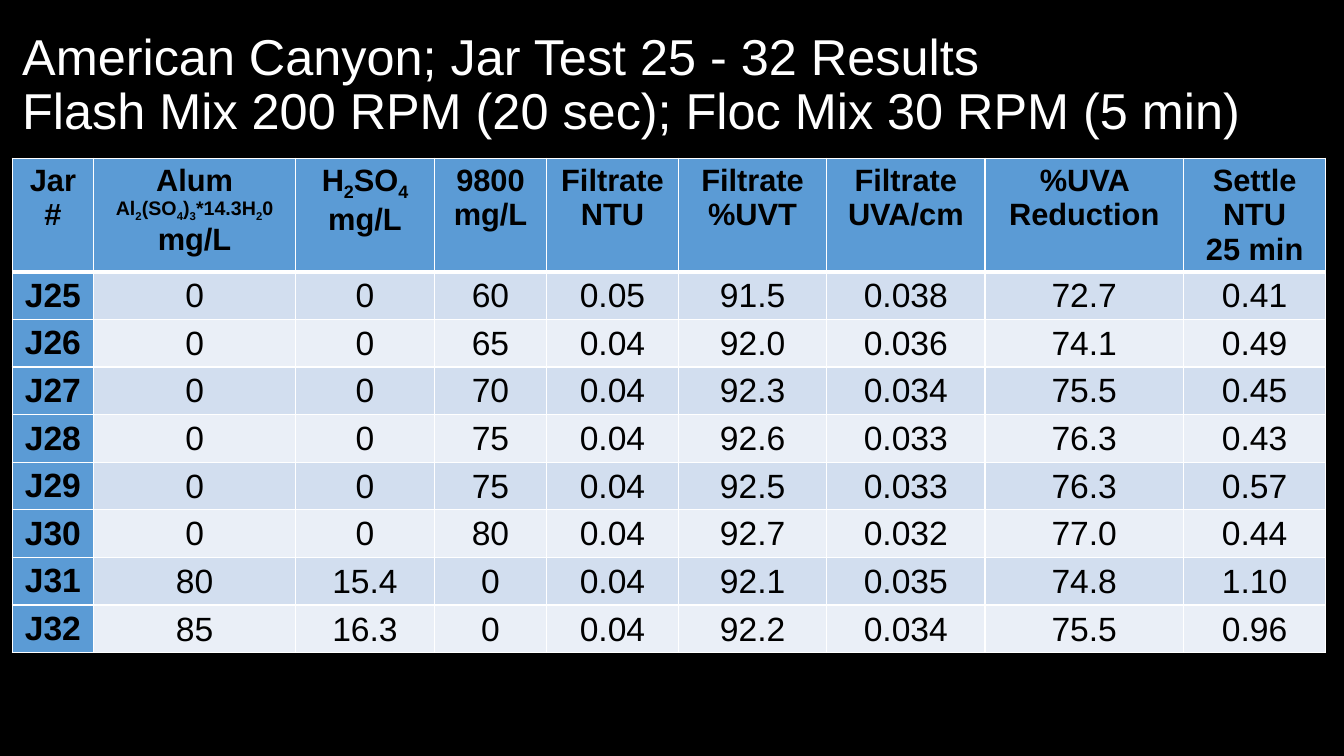
import dataclasses

import pptx
import pptx.dml.color
import pptx.enum.text
import pptx.oxml
import pptx.oxml.ns
import pptx.util

Anchor = pptx.enum.text.MSO_ANCHOR
Align = pptx.enum.text.PP_ALIGN


@dataclasses.dataclass(frozen=True)
class Theme:
    font: str = "Arial"
    page: str = "000000"
    title: str = "FFFFFF"
    text: str = "000000"
    accent: str = "5B9BD5"
    bands: tuple = ("D2DEEF", "EAEFF7")
    rule: str = "FFFFFF"
    title_size: int = 36
    header_size: int = 22
    formula_size: int = 14
    body_size: int = 24
    thin: int = 1
    thick: int = 3


TITLE = "American Canyon; Jar Test 25 - 32 Results\vFlash Mix 200 RPM (20 sec); Floc Mix 30 RPM (5 min)"
HEADERS = [
    ["Jar#"],
    ["Alum", "Al_2(SO_4)_3*14.3H_20", "mg/L"],
    ["H_2SO_4", "mg/L"],
    ["9800", "mg/L"],
    ["Filtrate", "NTU"],
    ["Filtrate", "%UVT"],
    ["Filtrate", "UVA/cm"],
    ["%UVA Reduction"],
    ["Settle", "NTU", "25 min"],
]
FORMULA = HEADERS[1][1]
COLUMNS = [0.81, 2, 1.38, 1.11, 1.31, 1.47, 1.57, 1.97, 1.41]
RESULTS = [
    ["J25", "0", "0", "60", "0.05", "91.5", "0.038", "72.7", "0.41"],
    ["J26", "0", "0", "65", "0.04", "92.0", "0.036", "74.1", "0.49"],
    ["J27", "0", "0", "70", "0.04", "92.3", "0.034", "75.5", "0.45"],
    ["J28", "0", "0", "75", "0.04", "92.6", "0.033", "76.3", "0.43"],
    ["J29", "0", "0", "75", "0.04", "92.5", "0.033", "76.3", "0.57"],
    ["J30", "0", "0", "80", "0.04", "92.7", "0.032", "77.0", "0.44"],
    ["J31", "80", "15.4", "0", "0.04", "92.1", "0.035", "74.8", "1.10"],
    ["J32", "85", "16.3", "0", "0.04", "92.2", "0.034", "75.5", "0.96"],
]


def apply(target, values):
    for name, value in values.items():
        setattr(target, name, value)


class Deck:
    def __init__(self, prs, theme):
        self.prs = prs
        self.theme = theme
        self.s = prs.slides.add_slide(prs.slide_layouts[5])
        self.paint(self.s.background.fill, theme.page)

    def x(self, share):
        return round(self.prs.slide_width * share)

    def y(self, share):
        return round(self.prs.slide_height * share)

    def box(self, left, top, width, height):
        return {"left": self.x(left), "top": self.y(top),
                "width": self.x(width), "height": self.y(height)}

    def paint(self, fill, color):
        fill.solid()
        fill.fore_color.rgb = pptx.dml.color.RGBColor.from_string(color)

    def style(self, font, size, color, bold=False):
        apply(font, {"name": self.theme.font, "size": pptx.util.Pt(size), "bold": bold})
        font.color.rgb = pptx.dml.color.RGBColor.from_string(color)

    def title(self, text, box):
        sp = self.s.shapes.title
        apply(sp, self.box(*box))
        tf = sp.text_frame
        apply(tf, {"text": text, "word_wrap": True, "vertical_anchor": Anchor.MIDDLE,
                   "auto_size": pptx.enum.text.MSO_AUTO_SIZE.NONE})
        p = tf.paragraphs[0]
        apply(p, {"alignment": Align.LEFT, "line_spacing": 0.9})
        for r in p.runs:
            self.style(r.font, self.theme.title_size, self.theme.title)

    def line(self, p, text, size, bold):
        p.alignment = Align.CENTER
        head, *rest = text.split("_")
        pieces = [(head, False)]
        for part in rest:
            pieces += [(part[0], True), (part[1:], False)]
        for piece, subscript in pieces:
            if piece:
                r = p.add_run()
                r.text = piece
                self.style(r.font, size, self.theme.text, bold)
                if subscript:
                    r._r.get_or_add_rPr().set("baseline", "-25000")

    def borders(self, cell, top, bottom):
        widths = {"L": self.theme.thin, "R": self.theme.thin, "T": top, "B": bottom}
        for side, width in widths.items():
            cell._tc.get_or_add_tcPr().append(pptx.oxml.parse_xml(
                f'<a:ln{side} {pptx.oxml.ns.nsdecls("a")} w="{pptx.util.Pt(width)}">'
                f'<a:solidFill><a:srgbClr val="{self.theme.rule}"/></a:solidFill></a:ln{side}>'))

    def cell(self, cell, lines, row, col):
        t = self.theme
        label = row == 0 or col == 0
        self.borders(cell, t.thick if row == 1 else t.thin, t.thick if row == 0 else t.thin)
        self.paint(cell.fill, t.accent if label else t.bands[(row - 1) % 2])
        if not label:
            inset = pptx.util.Inches(0.01)
            apply(cell, {"vertical_anchor": Anchor.MIDDLE, "margin_left": inset,
                         "margin_right": inset, "margin_top": inset, "margin_bottom": 0})
        tf = cell.text_frame
        for i, text in enumerate(lines):
            p = tf.paragraphs[0] if i == 0 else tf.add_paragraph()
            size = t.header_size if row == 0 else t.body_size
            self.line(p, text, t.formula_size if text == FORMULA else size, label)

    def table(self, headers, rows, columns, box, header_share, row_share):
        grid = [headers] + [[[value] for value in row] for row in rows]
        frame = self.s.shapes.add_table(len(grid), len(columns), **self.box(*box))
        tbl = frame.table
        apply(tbl, {"first_col": True, "horz_banding": True})
        for column, weight in zip(tbl.columns, columns):
            column.width = self.x(box[2] * weight / sum(columns))
        for i, row in enumerate(grid):
            tbl.rows[i].height = self.y(row_share if i else header_share)
            for j, lines in enumerate(row):
                self.cell(tbl.cell(i, j), lines, i, j)


def main():
    prs = pptx.Presentation()
    apply(prs, {"slide_width": pptx.util.Inches(13.33), "slide_height": pptx.util.Inches(7.5)})
    deck = Deck(prs, Theme())
    left, width = 0.12 / 13.33, 13.03 / 13.33
    header, row = 0.15, 0.063
    deck.title(TITLE, (left, 0.13 / 7.5, width, 1.45 / 7.5))
    deck.table(HEADERS, RESULTS, COLUMNS,
               (left, 1.57 / 7.5, width, header + row * len(RESULTS)), header, row)
    prs.save("out.pptx")


if __name__ == "__main__":
    main()
